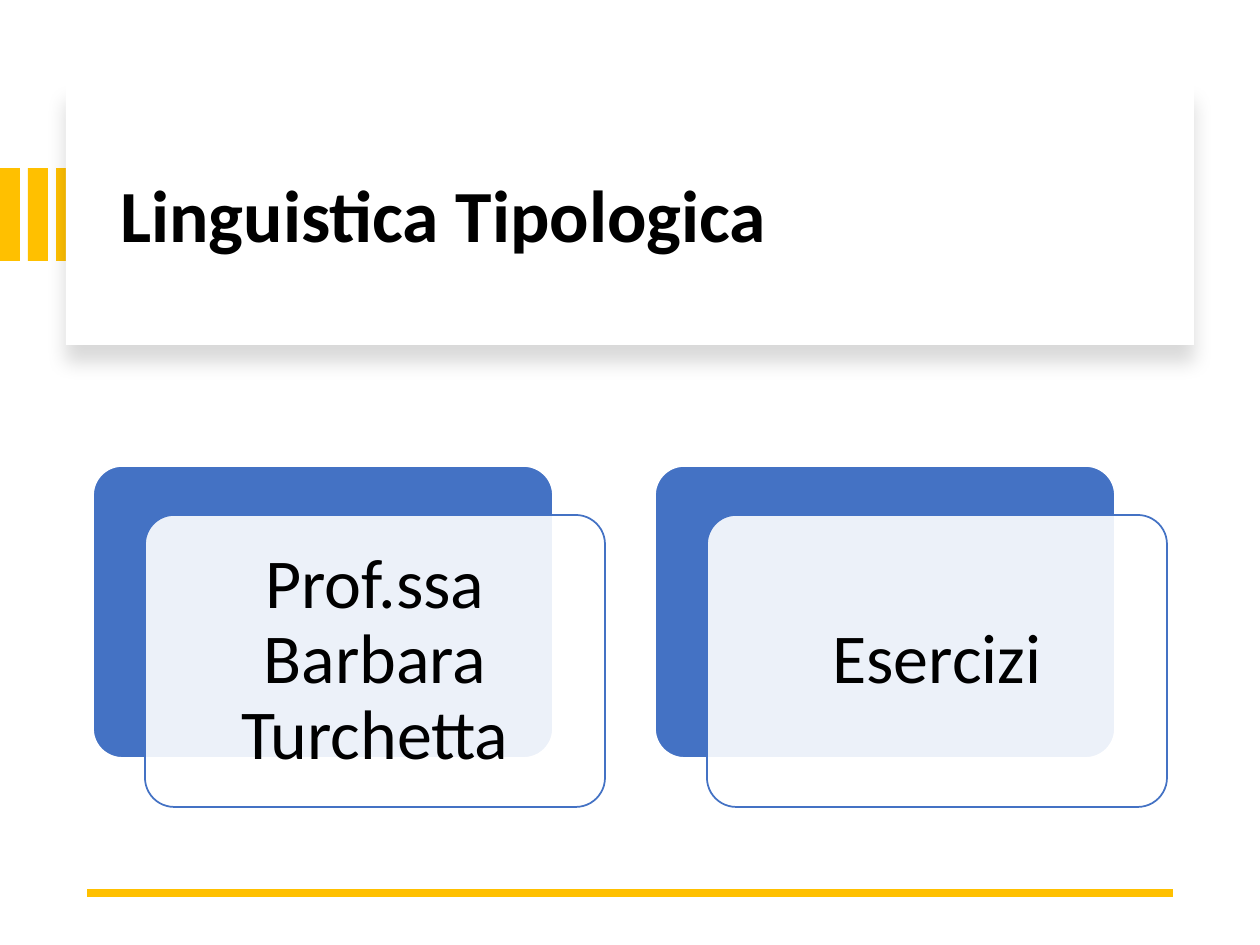
import pptx
import pptx.util
import pptx.dml.color
import pptx.enum.shapes
import pptx.enum.text
import pptx.oxml
import pptx.oxml.ns

# Content
TITLE = "Linguistica Tipologica"
CARDS = ["Prof.ssa Barbara Turchetta", "Esercizi"]

# Layout in px, 126 to the inch
PX = 914400 / 126
SLIDE = (1260, 945)
STRIPE = (0, 168, 20, 93)
STRIPE_COUNT, STRIPE_STEP = 3, 28
PANEL = (66, 84, 1128, 261)
TITLE_BOX = (108, 112, 1051, 214)
RULE_LEFT, RULE_RIGHT, RULE_Y = 87, 1173, 893
CARD = (93, 466, 460, 292)
CARD_STEP = 562
FRONT_DX, FRONT_DY = 52, 49
TEXT_MARGIN, TEXT_INSET = 9, 21

YELLOW, BLUE, WHITE, BLACK = "FFC000", "4472C4", "FFFFFF", "000000"
SHAPES = pptx.enum.shapes.MSO_SHAPE
ALIGN = pptx.enum.text.PP_ALIGN
DRAWING_NS = pptx.oxml.ns.nsdecls("a")


def emu(px):
    return pptx.util.Emu(round(px * PX))


def color(value):
    return pptx.dml.color.RGBColor.from_string(value)


def add_box(page, place, fill, kind=SHAPES.RECTANGLE, line=None):
    box = page.shapes.add_shape(kind, *map(emu, place))
    box.shadow.inherit = False
    box.fill.solid()
    box.fill.fore_color.rgb = color(fill)
    if kind == SHAPES.ROUNDED_RECTANGLE:
        box.adjustments[0] = 0.1
    if line:
        box.line.color.rgb = color(line)
        box.line.width = pptx.util.Pt(1)
    else:
        box.line.fill.background()
    return box


def add_text(page, place, text, size, bold=False, align=ALIGN.LEFT, inset=None):
    box = page.shapes.add_textbox(*map(emu, place))
    frame = box.text_frame
    frame.word_wrap = True
    frame.vertical_anchor = pptx.enum.text.MSO_ANCHOR.MIDDLE
    if inset is not None:
        frame.margin_left = frame.margin_right = emu(inset)
        frame.margin_top = frame.margin_bottom = emu(inset)
    para = frame.paragraphs[0]
    para.alignment = align
    para.line_spacing = 0.9
    span = para.add_run()
    span.text = text
    span.font.name = "Calibri"
    span.font.size = pptx.util.Pt(size)
    span.font.bold = bold
    span.font.color.rgb = color(BLACK)


def set_opacity(box, percent):
    fill_color = box.fill._xPr.find(".//" + pptx.oxml.ns.qn("a:srgbClr"))
    fill_color.append(pptx.oxml.parse_xml(
        f'<a:alpha {DRAWING_NS} val="{percent * 1000}"/>'))


def drop_shadow(box, blur, distance, percent):
    effects = box._element.spPr.find(pptx.oxml.ns.qn("a:effectLst"))
    effects.append(pptx.oxml.parse_xml(
        f'<a:outerShdw {DRAWING_NS} blurRad="{pptx.util.Pt(blur)}"'
        f' dist="{pptx.util.Pt(distance)}" dir="5400000" algn="t" rotWithShape="0">'
        f'<a:srgbClr val="{BLACK}"><a:alpha val="{percent * 1000}"/></a:srgbClr>'
        '</a:outerShdw>'))


def add_card(page, left, text):
    _, top, width, height = CARD
    rounded = SHAPES.ROUNDED_RECTANGLE
    add_box(page, (left, top, width, height), BLUE, rounded, WHITE)
    left, top = left + FRONT_DX, top + FRONT_DY
    front = add_box(page, (left, top, width, height), WHITE, rounded, BLUE)
    set_opacity(front, 90)
    place = (left + TEXT_MARGIN, top + TEXT_MARGIN,
             width - 2 * TEXT_MARGIN, height - 2 * TEXT_MARGIN)
    add_text(page, place, text, 40, align=ALIGN.CENTER, inset=TEXT_INSET)


def main():
    deck = pptx.Presentation()
    deck.slide_width, deck.slide_height = map(emu, SLIDE)
    page = deck.slides.add_slide(deck.slide_layouts[6])

    # Stripes at the left edge
    left, *rest = STRIPE
    for index in range(STRIPE_COUNT):
        add_box(page, (left + index * STRIPE_STEP, *rest), YELLOW)

    # Title panel
    panel = add_box(page, PANEL, WHITE)
    drop_shadow(panel, blur=11, distance=10, percent=15)
    add_text(page, TITLE_BOX, TITLE, 42, bold=True)

    # Bottom rule
    rule = page.shapes.add_connector(
        pptx.enum.shapes.MSO_CONNECTOR.STRAIGHT,
        *map(emu, (RULE_RIGHT, RULE_Y, RULE_LEFT, RULE_Y)))
    rule.line.color.rgb = color(YELLOW)
    rule.line.width = pptx.util.Pt(4.5)
    rule._element.spPr.append(pptx.oxml.parse_xml(f"<a:effectLst {DRAWING_NS}/>"))

    # Cards
    for index, text in enumerate(CARDS):
        add_card(page, CARD[0] + index * CARD_STEP, text)

    deck.save("out.pptx")


if __name__ == "__main__":
    main()
